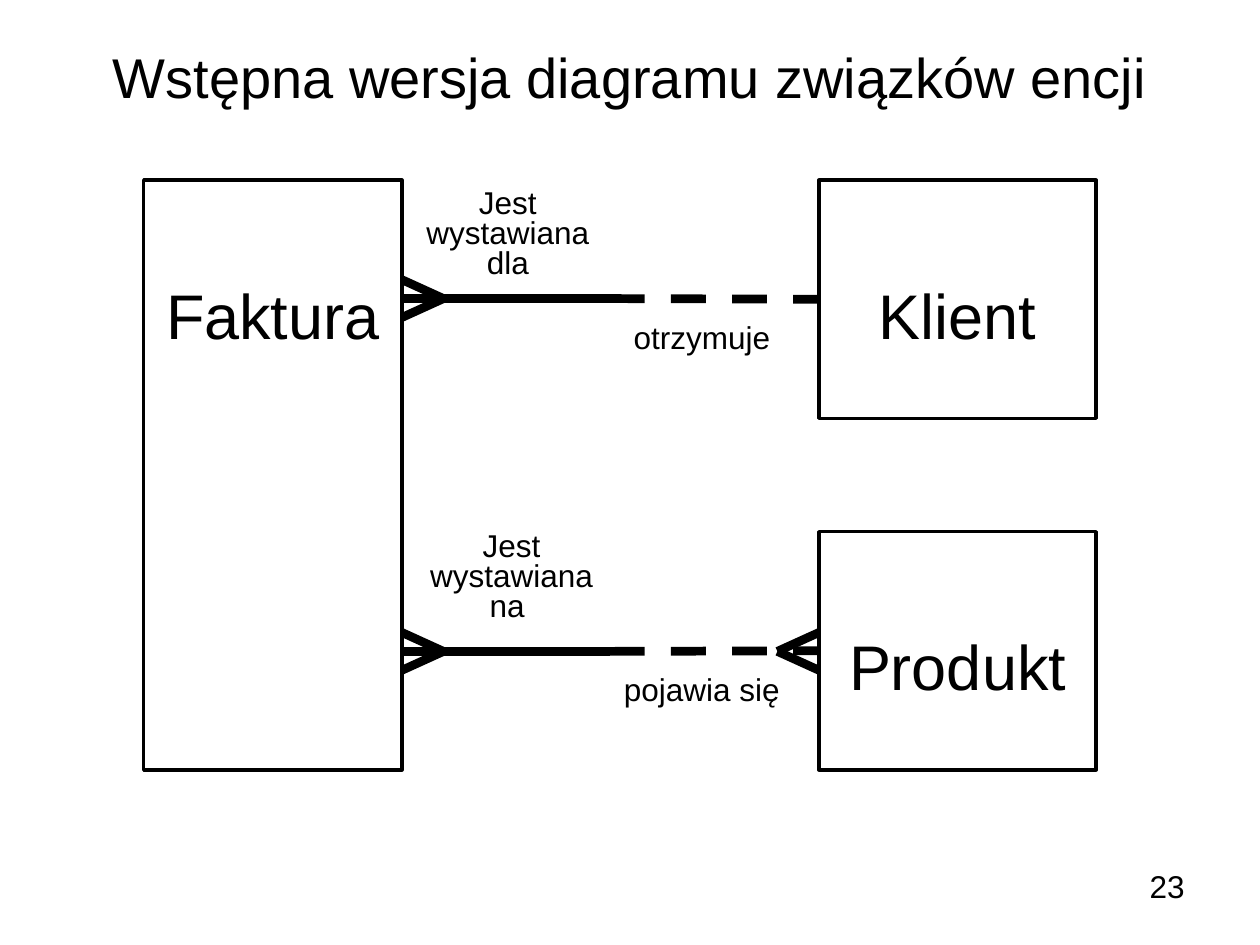
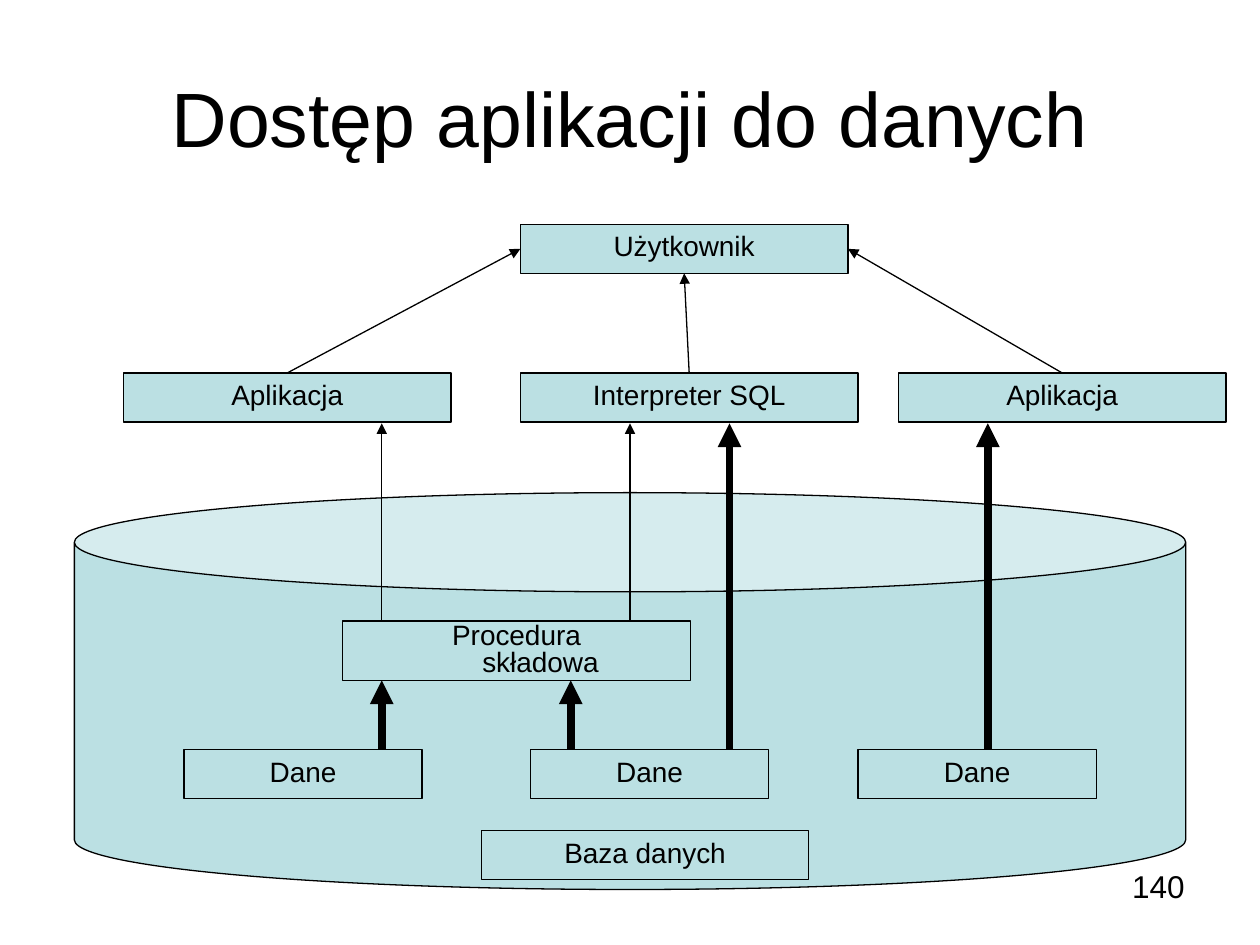
from dataclasses import dataclass
from typing import NamedTuple, Optional

from lxml.etree import SubElement
from pptx import Presentation
from pptx.dml.color import RGBColor
from pptx.enum.dml import MSO_LINE
from pptx.enum.shapes import MSO_CONNECTOR, MSO_SHAPE
from pptx.enum.text import MSO_ANCHOR as Anchor, PP_ALIGN as Align
from pptx.oxml.ns import qn
from pptx.shapes.autoshape import Shape
from pptx.shapes.connector import Connector
from pptx.slide import Slide
from pptx.util import Inches, Pt

TOP, LEFT, BOTTOM, RIGHT = range(4)


@dataclass(frozen=True)
class Theme:
    font: str = "Arial"
    ink: RGBColor = RGBColor(0x00, 0x00, 0x00)
    paper: RGBColor = RGBColor(0xFF, 0xFF, 0xFF)
    aqua: RGBColor = RGBColor(0xBB, 0xE0, 0xE3)
    long_title: int = 32
    title: int = 44
    entity: int = 36
    label: int = 18
    box: int = 16
    entity_line: float = 2
    relation_line: float = 5
    thin: float = 0.75
    thick: float = 4.5
    tight: float = 0.8


THEME = Theme()


class Point(NamedTuple):
    x: float
    y: float


class Area(NamedTuple):
    left: float
    top: float
    width: float
    height: float

    def lengths(self) -> list:
        return [Inches(value) for value in self]


class Side(NamedTuple):
    """The middle of one side of a rectangle."""
    shape: Shape
    index: int


class Relation(NamedTuple):
    y: float
    target: Shape
    many_targets: bool
    source_label: str
    label_corner: Point
    target_label: str


class Arrow(NamedTuple):
    x: float
    start_y: float
    end_y: float
    weight: float


def set_all(target: object, values: dict) -> None:
    for name, value in values.items():
        setattr(target, name, value)


def write(shape: Shape, text: str, size: int, align: Align = Align.CENTER,
          spacing: Optional[float] = None, hanging: float = 0, **frame_format) -> None:
    frame = shape.text_frame
    set_all(frame, {"word_wrap": True, "vertical_anchor": Anchor.TOP, **frame_format})
    paragraph = frame.paragraphs[0]
    paragraph.text = text
    set_all(paragraph, {"alignment": align, "line_spacing": spacing})
    if hanging:
        properties = paragraph._p.get_or_add_pPr()
        properties.set("marL", str(Inches(hanging)))
        properties.set("indent", str(Inches(-hanging)))
    for run in paragraph.runs:
        set_all(run.font, {"name": THEME.font, "size": Pt(size)})
        run.font.color.rgb = THEME.ink


def add_text(slide: Slide, area: Area, text: str, size: int, **text_format) -> None:
    write(slide.shapes.add_textbox(*area.lengths()), text, size, **text_format)


def add_outlined(slide: Slide, kind: MSO_SHAPE, area: Area, fill: RGBColor,
                 weight: float) -> Shape:
    shape = slide.shapes.add_shape(kind, *area.lengths())
    shape.shadow.inherit = False
    shape.fill.solid()
    shape.fill.fore_color.rgb = fill
    shape.line.color.rgb = THEME.ink
    shape.line.width = Pt(weight)
    return shape


def add_line(slide: Slide, start: Point | Side, end: Point | Side, weight: float,
             dashed: bool = False, arrow: bool = False) -> Connector:
    corners = [Inches(value) for at in (start, end)
               for value in (at if isinstance(at, Point) else (0, 0))]
    line = slide.shapes.add_connector(MSO_CONNECTOR.STRAIGHT, *corners)
    if isinstance(start, Side):
        line.begin_connect(*start)
    if isinstance(end, Side):
        line.end_connect(*end)
    line.line.color.rgb = THEME.ink
    line.line.width = Pt(weight)
    if dashed:
        line.line.dash_style = MSO_LINE.DASH
    if arrow:
        SubElement(line.line._get_or_add_ln(), qn("a:tailEnd"), type="triangle")
    SubElement(line._element.spPr, qn("a:effectLst"))
    return line


def add_slide(deck: Presentation, title: str, title_size: int, title_height: float,
              number: int) -> Slide:
    slide = deck.slides.add_slide(deck.slide_layouts[6])
    add_text(slide, Area(0.5, 0.3, 9, title_height), title, title_size,
             vertical_anchor=Anchor.MIDDLE)
    add_text(slide, Area(7.17, 6.83, 2.33, 0.52), str(number), THEME.label,
             align=Align.RIGHT)
    return slide


def add_entity(slide: Slide, name: str, area: Area) -> Shape:
    entity = add_outlined(slide, MSO_SHAPE.RECTANGLE, area, THEME.paper, THEME.entity_line)
    write(entity, name, THEME.entity, spacing=THEME.tight, margin_top=Inches(0.88))
    return entity


def add_crows_foot(slide: Slide, edge: float, y: float, reach: float) -> None:
    for spread in (-0.15, 0.15):
        add_line(slide, Point(edge, y + spread), Point(edge + reach, y),
                 THEME.relation_line)


def add_relation(slide: Slide, relation: Relation) -> None:
    source_edge, middle, target_edge, reach = 3.19, 4.84, 6.5, 0.33
    y = relation.y
    add_line(slide, Point(source_edge, y), Point(middle, y), THEME.relation_line)
    add_line(slide, Point(middle, y), Side(relation.target, LEFT),
             THEME.relation_line, dashed=True)
    add_crows_foot(slide, source_edge, y, reach)
    if relation.many_targets:
        add_crows_foot(slide, target_edge, y, -reach)
    add_text(slide, Area(*relation.label_corner, 1.62, 0.83), relation.source_label,
             THEME.label, spacing=THEME.tight)
    add_text(slide, Area(4.76, y + 0.16, 1.62, 0.34), relation.target_label,
             THEME.label, spacing=THEME.tight)


def add_box(slide: Slide, text: str, left: float, top: float, width: float = 2.6,
            height: float = 0.39) -> Shape:
    box = add_outlined(slide, MSO_SHAPE.RECTANGLE, Area(left, top, width, height),
                       THEME.aqua, THEME.thin)
    write(box, text, THEME.box, spacing=THEME.tight, hanging=0.38,
          word_wrap=False, vertical_anchor=Anchor.MIDDLE)
    return box


def build_entity_diagram(deck: Presentation) -> None:
    slide = add_slide(deck, "Wstępna wersja diagramu związków encji",
                      THEME.long_title, 0.61, 23)
    add_entity(slide, "Faktura", Area(1.14, 1.43, 2.05, 4.68))
    client = add_entity(slide, "Klient", Area(6.5, 1.43, 2.2, 1.89))
    product = add_entity(slide, "Produkt", Area(6.5, 4.22, 2.2, 1.89))
    for relation in (
        Relation(2.37, client, False, "Jest wystawiana dla", Point(3.22, 1.46), "otrzymuje"),
        Relation(5.17, product, True, "Jest wystawiana na ", Point(3.25, 4.18), "pojawia się"),
    ):
        add_relation(slide, relation)


def build_data_access(deck: Presentation) -> None:
    slide = add_slide(deck, "Dostęp aplikacji do danych", THEME.title, 1.25, 140)
    program_top, procedure_top, data_top = 2.96, 4.93, 5.95
    program_bottom, procedure_bottom = 3.36, 5.4

    database = add_outlined(slide, MSO_SHAPE.CAN, Area(0.59, 3.91, 8.82, 3.15),
                            THEME.aqua, THEME.thin)
    database.adjustments[0] = 0.25
    add_box(slide, "Baza danych", 3.82, 6.59)
    for left in (1.46, 4.21, 6.81):
        add_box(slide, "Dane", left, data_top, 1.89)
    add_box(slide, "Procedura\vskładowa", 2.72, procedure_top, 2.76, 0.47)

    user = add_box(slide, "Użytkownik", 4.13, 1.78)
    left_app = add_box(slide, "Aplikacja", 0.98, program_top)
    interpreter = add_box(slide, "Interpreter SQL", 4.13, program_top, 2.68)
    right_app = add_box(slide, "Aplikacja", 7.13, program_top)
    for program, side in ((left_app, LEFT), (interpreter, BOTTOM), (right_app, RIGHT)):
        add_line(slide, Side(program, TOP), Side(user, side), THEME.thin, arrow=True)

    for flow in (
        Arrow(3.03, procedure_top, program_bottom, THEME.thin),
        Arrow(5, procedure_top, program_bottom, THEME.thin),
        Arrow(5.79, data_top, program_bottom, THEME.thick),
        Arrow(7.84, data_top, program_bottom, THEME.thick),
        Arrow(3.03, data_top, procedure_bottom, THEME.thick),
        Arrow(4.53, data_top, procedure_bottom, THEME.thick),
    ):
        add_line(slide, Point(flow.x, flow.start_y), Point(flow.x, flow.end_y),
                 flow.weight, arrow=True)


def main() -> None:
    deck = Presentation()
    set_all(deck, {"slide_width": Inches(10), "slide_height": Inches(7.5)})
    build_entity_diagram(deck)
    build_data_access(deck)
    deck.save("out.pptx")


if __name__ == "__main__":
    main()
